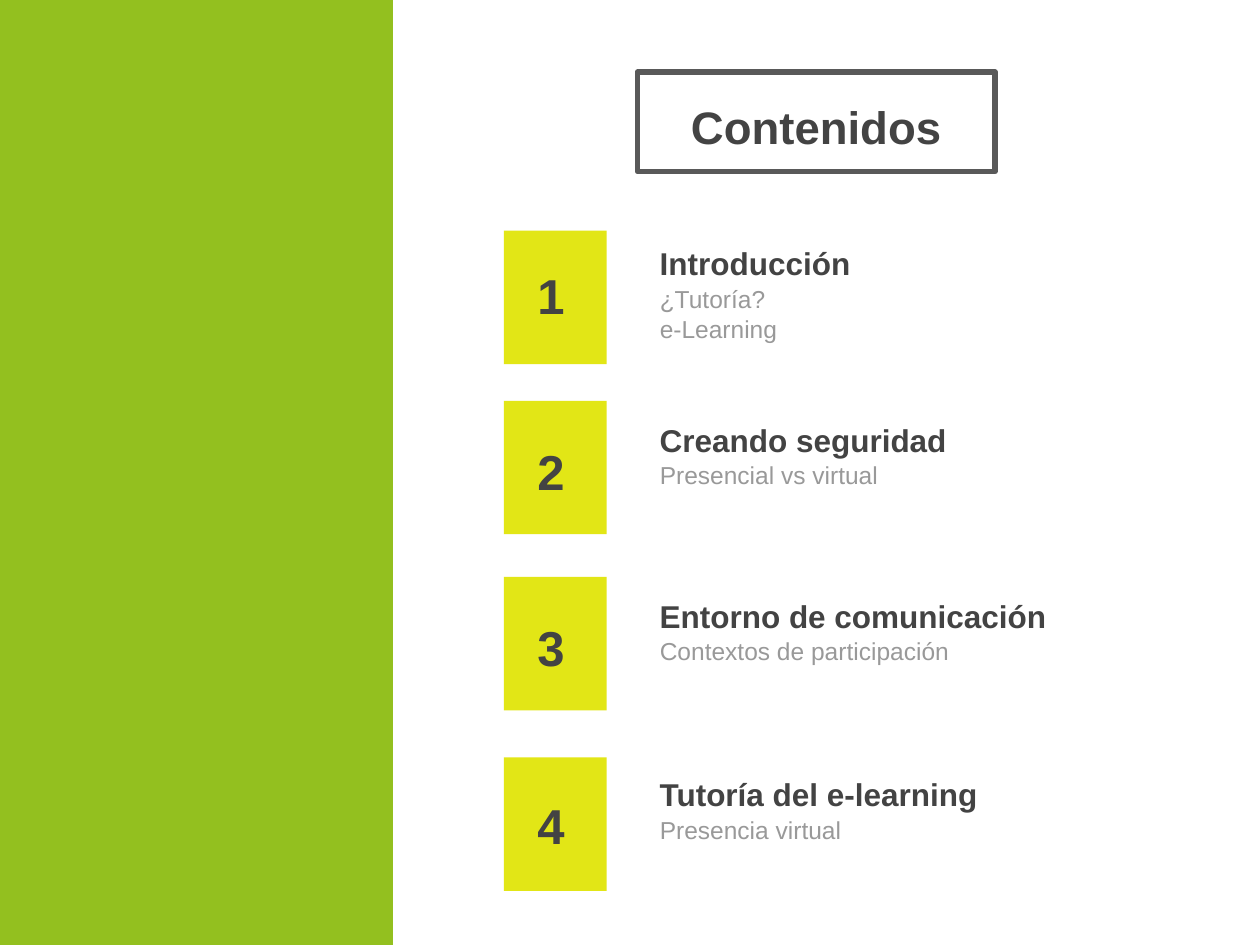
import pptx
import pptx.util
import pptx.dml.color
import pptx.enum.shapes
import pptx.enum.text
from lxml import etree

Cm, Pt = pptx.util.Cm, pptx.util.Pt
ALIGN = pptx.enum.text.PP_ALIGN
ANCHOR = pptx.enum.text.MSO_ANCHOR
GREEN, LIME, DARK, GREY, FRAME = "93C01F", "E2E616", "434343", "999999", "595959"


def color(code):
    return pptx.dml.color.RGBColor.from_string(code)


class Deck:
    font = "Arial"
    inset = Cm(0.25)
    styles = {
        "title": (dict(size=Pt(26), bold=True), DARK, ANCHOR.MIDDLE, ALIGN.CENTER),
        "number": (dict(size=Pt(28), bold=True), DARK, ANCHOR.MIDDLE, ALIGN.CENTER),
        "head": (dict(size=Pt(18), bold=True), DARK, ANCHOR.BOTTOM, ALIGN.LEFT),
        "list": (dict(size=Pt(14), bold=False), GREY, ANCHOR.TOP, ALIGN.LEFT),
    }

    def __init__(self, slide):
        self.slide = slide

    def block(self, box, fill):
        kind = pptx.enum.shapes.MSO_SHAPE.RECTANGLE
        shape = self.slide.shapes.add_shape(kind, *map(Cm, box))
        shape.shadow.inherit = False
        shape.fill.solid()
        shape.fill.fore_color.rgb = color(fill)
        shape.line.fill.background()

    def words(self, shape, lines, style, space=1.0):
        font, ink, anchor, align = self.styles[style]
        frame = shape.text_frame
        frame.text = "\n".join(lines)
        values = dict(word_wrap=True, vertical_anchor=anchor,
                      auto_size=pptx.enum.text.MSO_AUTO_SIZE.NONE)
        for side in ("left", "right", "top", "bottom"):
            values["margin_" + side] = self.inset
        for name, value in values.items():
            setattr(frame, name, value)
        for para in frame.paragraphs:
            form = dict(alignment=align, line_spacing=space, space_before=Pt(0))
            for name, value in form.items():
                setattr(para, name, value)
            if style == "list":
                self.plain(para)
            for name, value in dict(font, name=self.font).items():
                setattr(para.font, name, value)
            para.font.color.rgb = color(ink)

    def plain(self, para):
        """Take the bullet and indent off a paragraph."""
        props = para._p.get_or_add_pPr()
        props.set("marL", "0")
        props.set("indent", "0")
        etree.SubElement(props, pptx.oxml.ns.qn("a:buNone"))

    def label(self, box, text, style):
        shape = self.slide.shapes.add_textbox(*map(Cm, box))
        self.words(shape, [text], style)

    def holder(self, shape, box, lines, style, space=1.0):
        for name, value in zip(("left", "top", "width", "height"), box):
            setattr(shape, name, Cm(value))
        self.words(shape, lines, style, space)


def main():
    show = pptx.Presentation()
    show.slide_width, show.slide_height = Cm(25.4), Cm(19.05)
    # The comparison layout has a title and four body placeholders
    slide = show.slides.add_slide(show.slide_layouts[4])
    deck = Deck(slide)
    title, *bodies = list(slide.placeholders)[:5]

    # Side panel
    deck.block((0, 0, 7.92, 19.05), GREEN)

    # Framed title
    deck.holder(title, (12.85, 1.45, 7.21, 2.01), ["Contenidos"], "title", 1.15)
    title.line.color.rgb = color(FRAME)
    title.line.width = Pt(3)

    # Numbered topics: tile top, heading top, heading, list
    topics = [
        (4.65, 3.4, "Introducción", ["¿Tutoría?", "e-Learning"]),
        (8.08, 6.95, "Creando seguridad", ["Presencial vs virtual"]),
        (11.63, 10.5, "Entorno de comunicación", ["Contextos de participación"]),
        (15.27, 14.09, "Tutoría del e-learning", ["Presencia virtual"]),
    ]
    for num, (topic, body) in enumerate(zip(topics, bodies), 1):
        tile, top, head, lines = topic
        deck.block((10.16, tile, 2.07, 2.69), LIME)
        deck.label((9.36, top + 1.37, 3.5, 2.36), str(num), "number")
        deck.label((13.05, top, 12.3, 2.54), head, "head")
        deck.holder(body, (13.05, top + 2.08, 9.35, 2.13), lines, "list")

    show.save("out.pptx")


if __name__ == "__main__":
    main()
